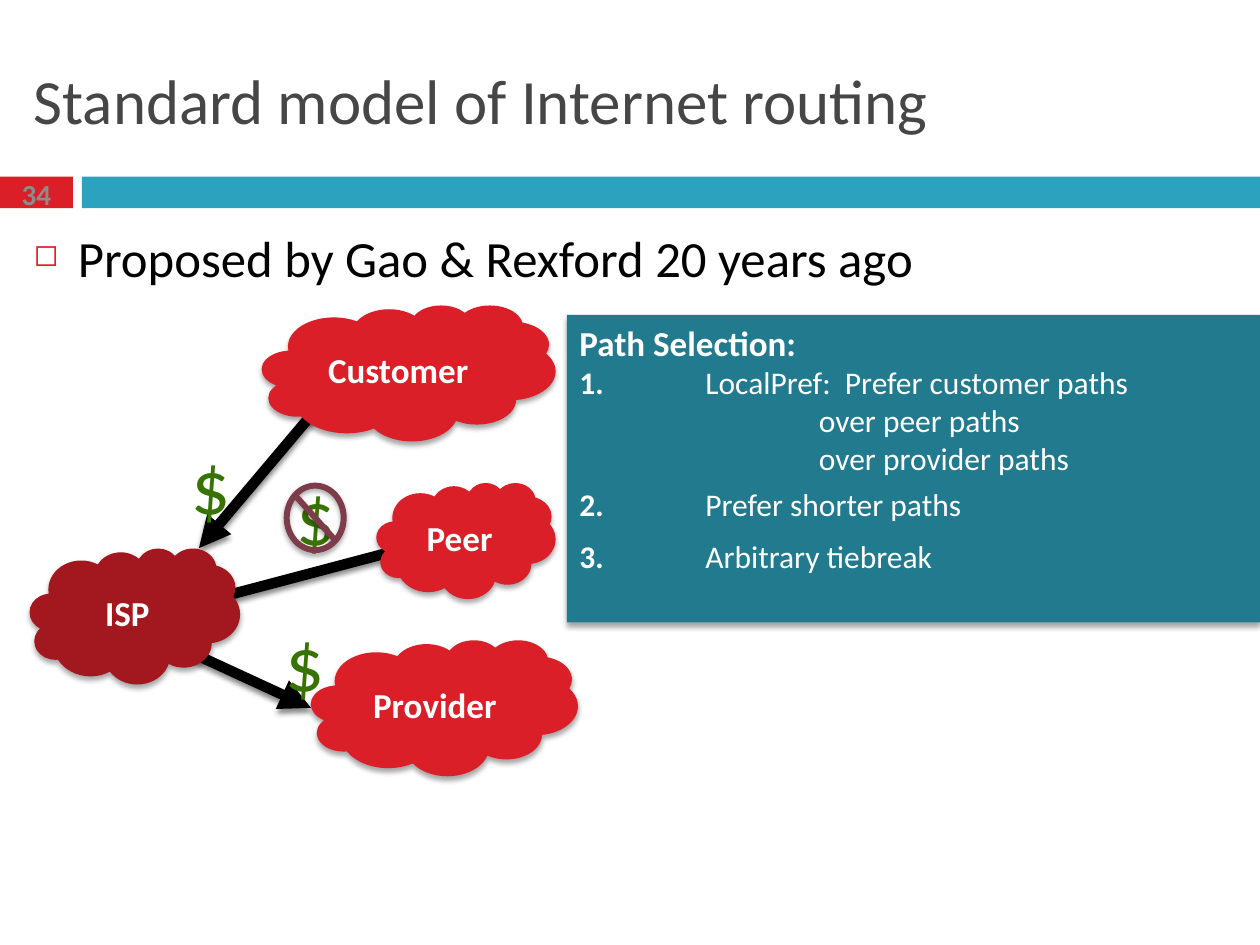
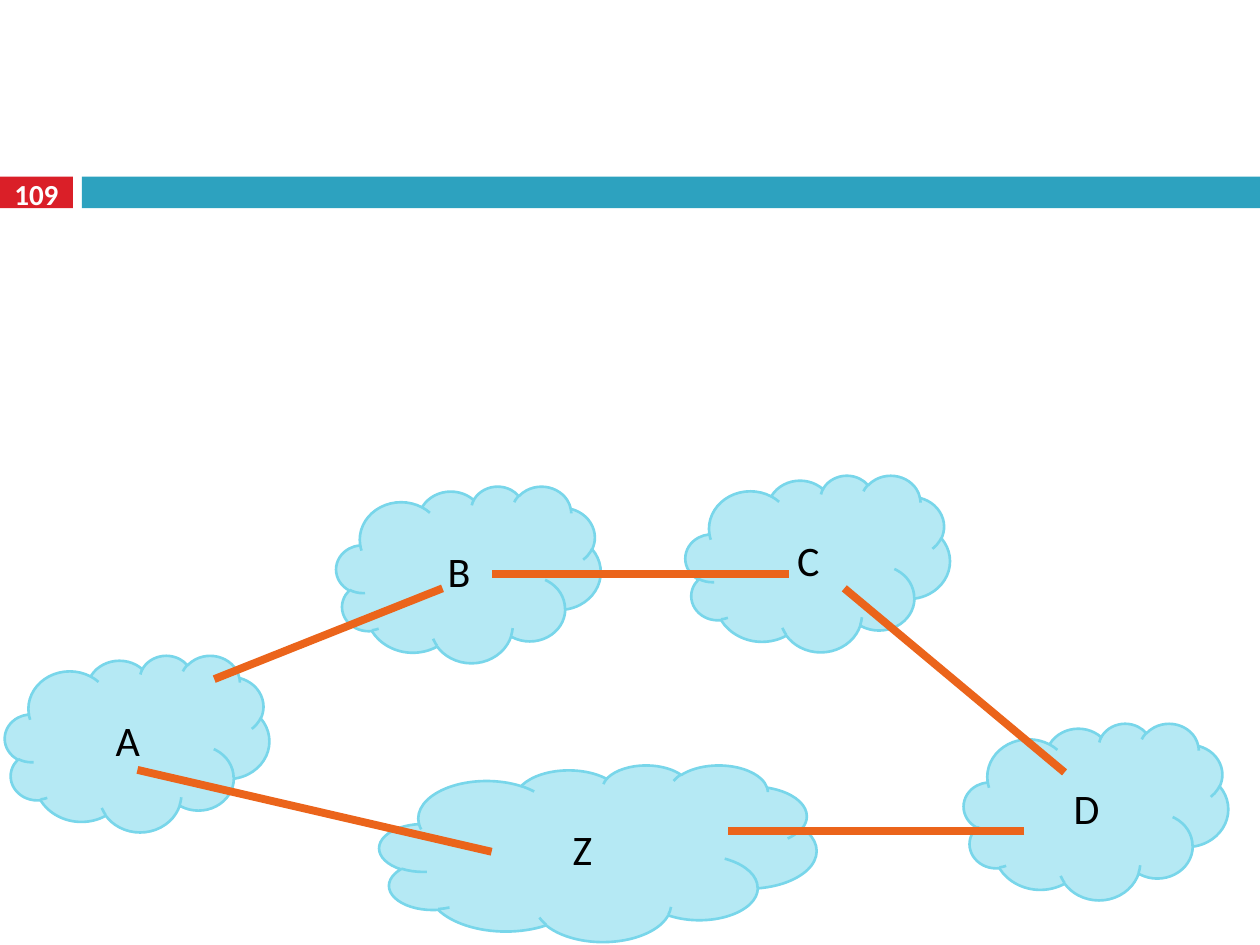
from lxml import etree
from pptx import Presentation
from pptx.dml.color import RGBColor
from pptx.enum.shapes import MSO_CONNECTOR, MSO_SHAPE
from pptx.enum.text import MSO_ANCHOR, PP_ALIGN
from pptx.oxml.ns import qn
from pptx.util import Cm, Pt

RECT, CLOUD, NO_SIGN = MSO_SHAPE.RECTANGLE, MSO_SHAPE.CLOUD, MSO_SHAPE.NO_SYMBOL
STRAIGHT = MSO_CONNECTOR.STRAIGHT
TOP, MIDDLE = MSO_ANCHOR.TOP, MSO_ANCHOR.MIDDLE
LEFT, CENTER = PP_ALIGN.LEFT, PP_ALIGN.CENTER

FONT = "Calibri"
WIDTH, HEIGHT = 25.4, 19.05
COLORS = {
    "red": "DA1F28", "dark_red": "A3171E", "band": "2DA2BF", "panel": "227A8F",
    "title": "464646", "black": "000000", "white": "FFFFFF", "gray": "8C8C8C",
    "dollar": "377300", "ban": "7D3C4A", "cloud": "B5E9F4",
    "cloud_edge": "78D6EA", "path": "EB641B",
}


def rgb(name):
    """Return the named colour."""
    return RGBColor.from_string(COLORS[name])


def within(box, part):
    """Shift a part given relative to a box onto the slide."""
    return (box[0] + part[0], box[1] + part[1], *part[2:])


def add_shadow(effects, alpha, dist):
    """Add a soft downward shadow to an effect list."""
    shadow = etree.SubElement(effects, qn("a:outerShdw"), blurRad=str(Pt(3)),
                              dist=str(Pt(dist)), dir="5400000", rotWithShape="0")
    color = etree.SubElement(shadow, qn("a:srgbClr"), val=COLORS["black"])
    etree.SubElement(color, qn("a:alpha"), val=str(alpha * 1000))


def add_run(p, text, size, color, bold=False):
    """Add one formatted run to a paragraph."""
    r = p.add_run()
    r.text = text
    r.font.name, r.font.size, r.font.bold = FONT, Pt(size), bold
    r.font.color.rgb = rgb(color)


def set_text(sp, text, size, color, bold=False, align=CENTER, anchor=MIDDLE):
    """Write a single paragraph into a shape and return it."""
    tf = sp.text_frame
    tf.word_wrap, tf.vertical_anchor = True, anchor
    p = tf.paragraphs[0]
    p.alignment = align
    add_run(p, text, size, color, bold)
    return p


def add_text(shapes, box, *args, **kwargs):
    """Add a text box holding one paragraph and return the paragraph."""
    return set_text(shapes.add_textbox(*map(Cm, box)), *args, **kwargs)


def add_shape(shapes, kind, box, fill, edge=None, shadow=False):
    """Add a filled preset shape."""
    sp = shapes.add_shape(kind, *map(Cm, box))
    sp.fill.solid()
    sp.fill.fore_color.rgb = rgb(fill)
    if edge:
        sp.line.color.rgb, sp.line.width = rgb(edge), Pt(1.5)
    else:
        sp.line.fill.background()
    sp.shadow.inherit = False
    if shadow:
        add_shadow(sp._element.spPr.find(qn("a:effectLst")), 35, 2)
    return sp


def add_line(shapes, box, start, end, color, width, arrow=False, shadow=False):
    """Add a straight line between two points of a box."""
    ends = (*within(box, start), *within(box, end))
    line = shapes.add_connector(STRAIGHT, *map(Cm, ends))
    line.line.color.rgb, line.line.width = rgb(color), Pt(width)
    if arrow:
        etree.SubElement(line.line._get_or_add_ln(), qn("a:tailEnd"), type="triangle")
    effects = etree.SubElement(line._element.spPr, qn("a:effectLst"))
    if shadow:
        add_shadow(effects, 45, 2.4)


def set_indent(p, left, first=0):
    """Set the left margin and first-line indent of a paragraph."""
    pPr = p._p.get_or_add_pPr()
    pPr.set("marL", str(Cm(left)))
    pPr.set("indent", str(Cm(first)))
    return pPr


def draw_band(s, box, number, number_color):
    """Draw the numbered tab and the band beside it."""
    tab, band_left = 1.47, 1.65
    _, _, w, h = box
    add_shape(s.shapes, RECT, within(box, (0, 0, tab, h)), "red")
    add_shape(s.shapes, RECT, within(box, (band_left, 0, w - band_left, h)), "band")
    add_text(s.shapes, within(box, (0, -0.08, tab, h + 0.2)), number, 16.6,
             number_color, bold=True)


def draw_heading(s, box, title, bullet):
    """Write the title and the bullet below the band."""
    w, h = box[2:]
    add_text(s.shapes, within(box, (0, 0, w, 2.74)), title, 36, "title", align=LEFT)
    p = add_text(s.shapes, within(box, (0, 3.81, w, h - 3.81)), bullet, 29, "black",
                 align=LEFT, anchor=TOP)
    p.space_before = Pt(7)
    pPr = set_indent(p, 0.89, -0.89)
    color = etree.SubElement(pPr, qn("a:buClr"))
    etree.SubElement(color, qn("a:srgbClr"), val=COLORS["red"])
    etree.SubElement(pPr, qn("a:buSzPct"), val="60000")
    etree.SubElement(pPr, qn("a:buChar"), char="◻")


def draw_isp_network(s, box):
    """Draw the ISP, its neighbours and the direction money flows."""
    links = [((6.39, 1.37), (3.41, 4.9), True), ((2.7, 6.19), (7.58, 4.9), False),
             ((2.7, 6.75), (5.67, 8.12), True)]
    clouds = [("ISP", (0, 4.9, 4.24, 2.74), "dark_red"),
              ("Customer", (4.68, 0, 5.92, 2.74), "red"),
              ("Peer", (6.99, 3.58, 3.61, 2.34), "red"),
              ("Provider", (5.67, 6.75, 5.38, 2.74), "red")]
    for start, end, arrow in links:
        add_line(s.shapes, box, start, end, "black", 6, arrow, shadow=True)
    for name, part, fill in clouds:
        sp = add_shape(s.shapes, CLOUD, within(box, part), fill, shadow=True)
        set_text(sp, name, 20, "white", bold=True)
    free = s.shapes.add_group_shape().shapes
    dollars = [(free, (5.12, 3.17, 1.7, 2.13)), (s.shapes, (3.01, 2.54, 1.07, 2.13)),
               (s.shapes, (4.91, 6.12, 1.07, 2.13))]
    for shapes, part in dollars:
        add_text(shapes, within(box, part), "$", 44, "dollar", align=LEFT, anchor=TOP)
    ban = add_shape(free, NO_SIGN, within(box, (5.12, 3.58, 1.27, 1.42)), "ban",
                    shadow=True)
    ban.adjustments[0] = 0.095


def draw_path_selection(s, box):
    """Draw the panel that ranks the path selection rules."""
    rules = [("1.", "LocalPref:  Prefer customer paths", 0), ("", "over peer paths", 0),
             ("", "over provider paths", 0), ("2.", "Prefer shorter paths", 4.8),
             ("3.", "Arbitrary tiebreak", 8.4)]
    sp = add_shape(s.shapes, RECT, box, "panel", shadow=True)
    set_text(sp, "Path Selection:", 20, "white", bold=True, align=LEFT, anchor=TOP)
    for number, rule, gap in rules:
        p = sp.text_frame.add_paragraph()
        p.alignment, p.space_before = LEFT, Pt(gap)
        if number:
            set_indent(p, 2.54, -2.54)
            add_run(p, number + "\t", 18, "white", bold=True)
        else:
            set_indent(p, 4.83)
        add_run(p, rule, 18, "white")


def draw_cloud_ring(s, box):
    """Draw five clouds joined in a ring."""
    w, h = 5.33, 3.56
    clouds = [("B", 6.68, 0.22, w), ("A", 0, 3.63, w), ("Z", 7.55, 5.84, 8.81),
              ("C", 13.72, 0, w), ("D", 19.33, 5, w)]
    links = [((9.81, 7.59), (2.67, 5.94)), ((8.82, 2.28), (4.22, 4.11)),
             ((15.8, 2), (9.81, 2)), ((21.36, 5.99), (16.92, 2.28)),
             ((20.55, 7.18), (14.58, 7.18))]
    for name, left, top, width in clouds:
        sp = add_shape(s.shapes, CLOUD, within(box, (left, top, width, h)), "cloud",
                       "cloud_edge")
        set_text(sp, name, 24, "black")
    for start, end in links:
        add_line(s.shapes, box, start, end, "path", 4.5)


def main():
    """Build both slides and save them."""
    prs = Presentation()
    prs.slide_width, prs.slide_height = Cm(WIDTH), Cm(HEIGHT)
    blank = prs.slide_layouts[6]
    band = (0, 3.56, WIDTH, 0.64)

    s = prs.slides.add_slide(blank)
    draw_band(s, band, "34", "gray")
    draw_heading(s, (0.43, 0.64, 24.56, 17.98), "Standard model of Internet routing",
                 "Proposed by Gao & Rexford 20 years ago")
    draw_isp_network(s, (0.6, 6.15))
    draw_path_selection(s, (11.43, 6.35, 13.97, 6.2))

    s = prs.slides.add_slide(blank)
    draw_band(s, band, "109", "white")
    draw_cloud_ring(s, (0.1, 9.58))
    prs.save("out.pptx")


if __name__ == "__main__":
    main()
